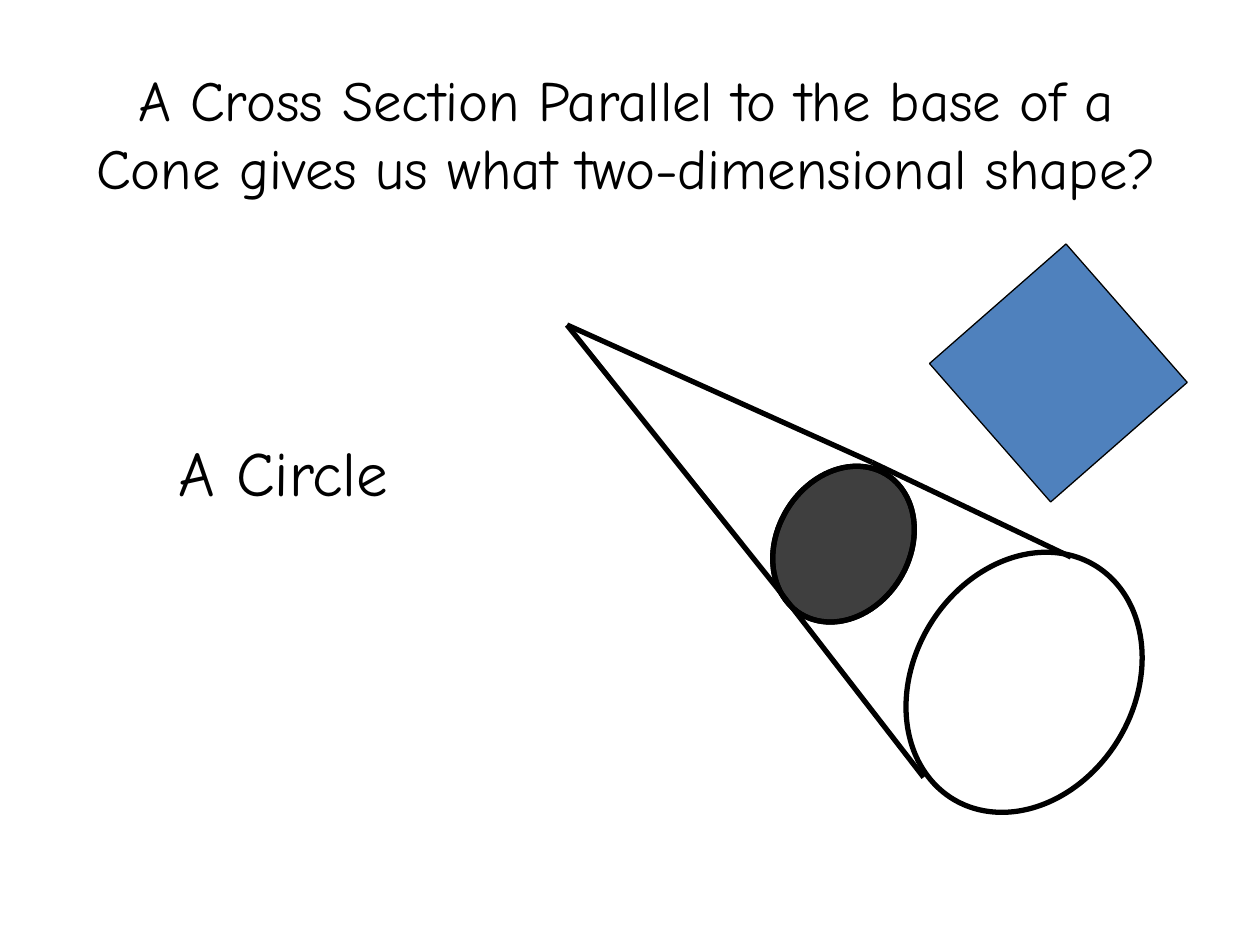
from lxml import etree
from pptx import Presentation
from pptx.dml.color import RGBColor
from pptx.enum import shapes, text
from pptx.oxml.ns import qn
from pptx.util import Cm, Pt

BLACK = "000000"
BLUE = "4F81BD"


def color(hex_string):
    return RGBColor.from_string(hex_string)


def write(frame, words, size):
    run = frame.paragraphs[0].add_run()
    run.text = words
    run.font.name = "Comic Neue"
    run.font.size = Pt(size)
    run.font.color.rgb = color(BLACK)


prs = Presentation()
prs.slide_width, prs.slide_height = Cm(25.4), Cm(19.05)
slide = prs.slides.add_slide(prs.slide_layouts[5])

# Question
question = slide.shapes.title
question.left, question.top = Cm(1.27), Cm(0.43)
question.width, question.height = Cm(22.71), Cm(4.5)
frame = question.text_frame
frame.auto_size = text.MSO_AUTO_SIZE.NONE
frame.vertical_anchor = text.MSO_ANCHOR.MIDDLE
frame.paragraphs[0].alignment = text.PP_ALIGN.CENTER
write(frame, "A Cross Section Parallel to the base of a Cone gives us "
      "what two-dimensional shape?", 32.4)

# Sides of the cone, each broken where the cutting plane meets it
apex = (11.43, 6.55)
upper_cut, upper_base = (17.58, 9.32), (21.59, 11.23)
lower_cut, lower_base = (15.67, 11.86), (18.62, 15.67)
for start, end in [(upper_base, upper_cut), (upper_cut, apex),
                   (lower_cut, apex), (lower_base, lower_cut)]:
    side = slide.shapes.add_connector(
        shapes.MSO_CONNECTOR.STRAIGHT, *map(Cm, start + end))
    side.line.color.rgb = color(BLACK)
    side.line.width = Pt(3)
    etree.SubElement(side._element.spPr, qn("a:effectLst"))

# Base, cross section and cutting plane; the section shows on both sides
# of the plane: kind, box, rotation, fill, opacity in percent, line width
OVAL, RECTANGLE = shapes.MSO_SHAPE.OVAL, shapes.MSO_SHAPE.RECTANGLE
base = (OVAL, (18.42, 11, 4.45, 5.51), 31.4, None, 100, 3)
section = (OVAL, (15.67, 9.32, 2.67, 3.3), 31.4, BLACK, 50, 3)
plane = (RECTANGLE, (19.48, 5.69, 3.71, 3.66), 48.8, BLUE, 100, 0.75)
for kind, box, rotation, fill, opacity, width in [base, section, plane, section]:
    figure = slide.shapes.add_shape(kind, *map(Cm, box))
    figure.rotation = rotation
    figure.shadow.inherit = False
    figure.line.color.rgb = color(BLACK)
    figure.line.width = Pt(width)
    if fill is None:
        figure.fill.background()
        continue
    figure.fill.solid()
    figure.fill.fore_color.rgb = color(fill)
    if opacity < 100:
        tint = figure._element.spPr.find(qn("a:solidFill"))[0]
        etree.SubElement(tint, qn("a:alpha"), val=str(opacity * 1000))

# Answer
answer = slide.shapes.add_textbox(Cm(3.35), Cm(8.61), Cm(5.26), Cm(1.78))
answer.text_frame.word_wrap = False
answer.text_frame.auto_size = text.MSO_AUTO_SIZE.SHAPE_TO_FIT_TEXT
write(answer.text_frame, "A Circle", 36)

prs.save("out.pptx")
